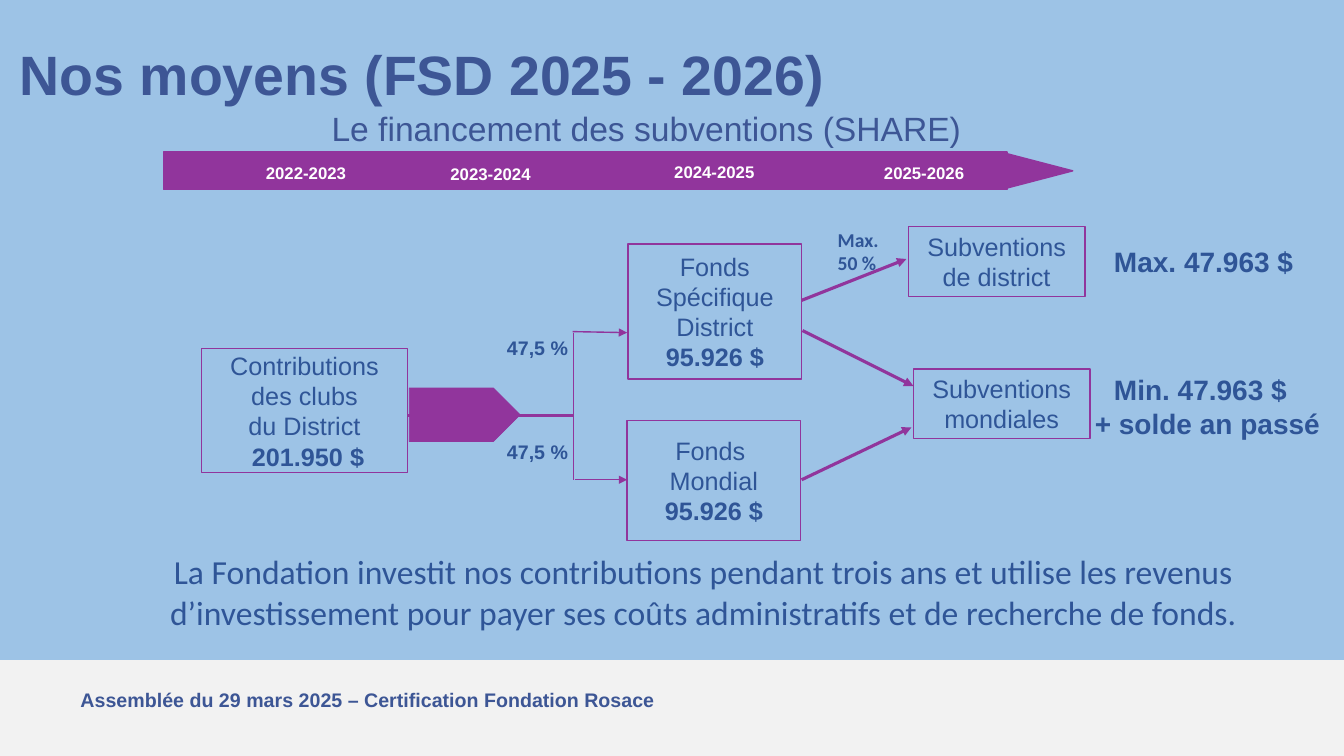
"""Build the slide on how district grants are financed."""
from dataclasses import dataclass

from pptx import Presentation
from pptx.dml.color import RGBColor
from pptx.enum import shapes, text
from pptx.oxml import parse_xml
from pptx.oxml.ns import nsdecls
from pptx.util import Emu, Pt

PX = 9144
SKY = RGBColor(0x9D, 0xC3, 0xE6)
PALE = RGBColor(0xF2, 0xF2, 0xF2)
NAVY = RGBColor(0x3D, 0x56, 0x95)
BLUE = RGBColor(0x2F, 0x55, 0x97)
PLUM = RGBColor(0x91, 0x35, 0x9C)
WHITE = RGBColor(0xFF, 0xFF, 0xFF)
KIND = shapes.MSO_SHAPE
LEFT, MID = text.PP_ALIGN.LEFT, text.PP_ALIGN.CENTER
TOP, CORE, BASE = (text.MSO_ANCHOR.TOP, text.MSO_ANCHOR.MIDDLE,
                   text.MSO_ANCHOR.BOTTOM)
NONE = 9


@dataclass
class Solid:
    """A filled shape without words."""
    x: int
    y: int
    w: int
    h: int
    kind: KIND = KIND.RECTANGLE
    color: RGBColor = PLUM
    edge: float = 1
    turn: int = 0


@dataclass
class Label:
    """Words in an area, bold from one paragraph onwards."""
    x: int
    y: int
    w: int
    h: int
    words: str
    size: float = 14
    bold: int = 0
    color: RGBColor = BLUE
    font: str = "Arial"
    align: text.PP_ALIGN = LEFT
    anchor: text.MSO_ANCHOR = TOP
    space: float = 1
    indent: int = 0


@dataclass
class Node:
    """An outlined step of the flow."""
    x: int
    y: int
    w: int
    h: int
    words: str
    bold: int = NONE


@dataclass
class Link:
    """A straight line between two points."""
    x: int
    y: int
    to_x: int
    to_y: int
    width: float
    arrow: bool = True


SOLIDS = [
    Solid(0, 655, 1333, 95, color=PALE, edge=0),
    Solid(1013, 136, 35, 67, KIND.ISOSCELES_TRIANGLE, turn=90),
    Solid(162, 151, 837, 37),
    Solid(406, 385, 110, 53, KIND.PENTAGON, edge=0.5),
]
NODES = [
    Node(200, 346, 204, 123,
         "Contributions\ndes clubs\ndu District\n 201.950 $", 3),
    Node(623, 242, 172, 134, "Fonds\nSpécifique\nDistrict\n95.926 $", 3),
    Node(622, 417, 172, 119, "Fonds \nMondial\n95.926 $", 2),
    Node(901, 225, 175, 69, "Subventions\nde district"),
    Node(906, 366, 175, 69, "Subventions\nmondiales"),
]
LINKS = [
    Link(404, 412, 568, 412, 2.25, False),
    Link(795, 298, 899, 257, 2.25),
    Link(796, 328, 906, 383, 2.25),
    Link(795, 476, 904, 424, 2.25),
    Link(568, 329, 622, 330, 1),
    Link(569, 330, 569, 476, 1, False),
    Link(570, 476, 622, 476, 1),
]
YEARS = [(241, 157, "2022-2023"), (424, 158, "2023-2024"),
         (646, 156, "2024-2025"), (854, 157, "2025-2026")]
LABELS = [
    Label(70, 678, 624, 34,
          "Assemblée du 29 mars 2025 – Certification Fondation Rosace",
          color=NAVY),
    Label(-16, 15, 869, 97, "Nos moyens (FSD 2025 - 2026)", 39.6,
          color=NAVY, align=MID, anchor=BASE, space=0.9),
    Label(215, 110, 852, 45, "Le financement des subventions (SHARE)", 24,
          NONE, NAVY, align=MID, space=0.8),
    Label(493, 328, 88, 34, "47,5 %"),
    Label(493, 432, 110, 34, "47,5 %"),
    Label(821, 221, 67, 57, "Max. 50 %", font="Calibri"),
    Label(147, 542, 1101, 118,
          "La Fondation investit nos contributions pendant trois ans et "
          "utilise les revenus d’investissement pour payer ses coûts "
          "administratifs et de recherche de fonds.",
          24, NONE, font="Calibri", align=MID),
    Label(1095, 238, 237, 44, "Max. 47.963 $", 20),
    Label(1076, 365, 247, 77, "Min. 47.963 $\n+ solde an passé", 20,
          indent=19),
] + [Label(x, y, 125, 30, year, 12, color=WHITE, align=MID)
     for x, y, year in YEARS]


def area(item: Solid | Label | Node) -> list[Emu]:
    """Return the place of an item in EMU."""
    return [Emu(n * PX) for n in (item.x, item.y, item.w, item.h)]


def write(shape, label: Label) -> None:
    """Fill a shape with the words of a label."""
    frame = shape.text_frame
    frame.text = label.words
    frame.word_wrap = True
    frame.vertical_anchor = label.anchor
    for i, para in enumerate(frame.paragraphs):
        para.alignment = label.align
        para.line_spacing = label.space
        if label.indent and i == 0:
            para._p.get_or_add_pPr().set("indent", str(label.indent * PX))
        for run in para.runs:
            run.font.name = label.font
            run.font.size = Pt(label.size)
            run.font.bold = i >= label.bold
            run.font.color.rgb = label.color


def draw_solid(slide, solid: Solid) -> None:
    """Draw a filled shape."""
    shape = slide.shapes.add_shape(solid.kind, *area(solid))
    shape.shadow.inherit = False
    shape.rotation = solid.turn
    shape.fill.solid()
    shape.fill.fore_color.rgb = solid.color
    if solid.edge:
        shape.line.color.rgb = solid.color
        shape.line.width = Pt(solid.edge)
    else:
        shape.line.fill.background()


def draw_node(slide, node: Node) -> None:
    """Draw an outlined step with centred words."""
    shape = slide.shapes.add_shape(KIND.RECTANGLE, *area(node))
    shape.shadow.inherit = False
    shape.fill.background()
    shape.line.color.rgb = PLUM
    shape.line.width = Pt(1)
    write(shape, Label(node.x, node.y, node.w, node.h, node.words, 18,
                       node.bold, align=MID, anchor=CORE))


def draw_link(slide, link: Link) -> None:
    """Draw a line, with an arrowhead at its end if wanted."""
    ends = [Emu(n * PX) for n in (link.x, link.y, link.to_x, link.to_y)]
    line = slide.shapes.add_connector(shapes.MSO_CONNECTOR.STRAIGHT, *ends)
    line.line.color.rgb = PLUM
    line.line.width = Pt(link.width)
    if link.arrow:
        head = parse_xml(f'<a:tailEnd {nsdecls("a")} type="triangle"/>')
        line.line._get_or_add_ln().append(head)
    line._element.spPr.append(parse_xml(f'<a:effectLst {nsdecls("a")}/>'))


def main() -> None:
    """Build and save the slide."""
    deck = Presentation()
    deck.slide_width, deck.slide_height = Emu(1333 * PX), Emu(750 * PX)
    slide = deck.slides.add_slide(deck.slide_layouts[6])
    back = slide.background.fill
    back.solid()
    back.fore_color.rgb = SKY
    for solid in SOLIDS:
        draw_solid(slide, solid)
    for node in NODES:
        draw_node(slide, node)
    for link in LINKS:
        draw_link(slide, link)
    for label in LABELS:
        write(slide.shapes.add_textbox(*area(label)), label)
    deck.save("out.pptx")


if __name__ == "__main__":
    main()
